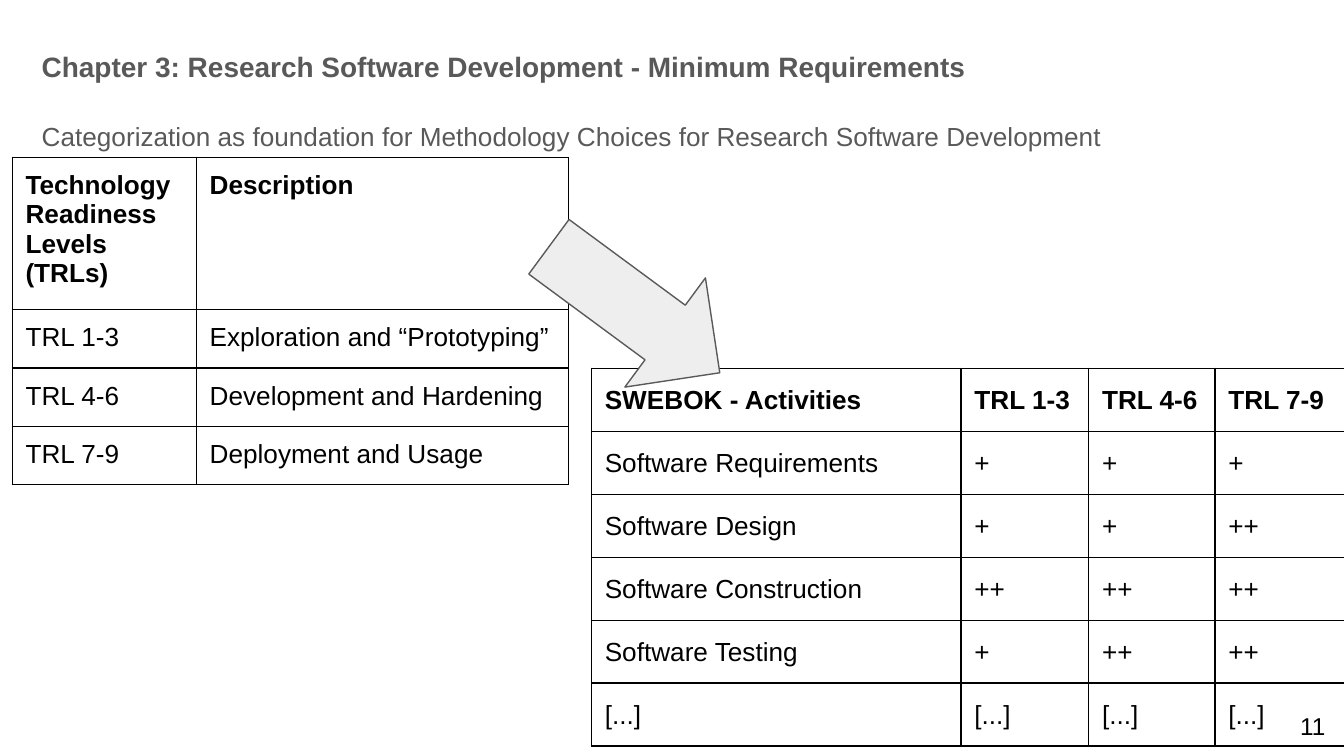
from lxml.etree import SubElement
from pptx import Presentation
from pptx.dml.color import RGBColor
from pptx.enum.shapes import MSO_SHAPE
from pptx.enum.text import MSO_ANCHOR, MSO_AUTO_SIZE, PP_ALIGN
from pptx.oxml.ns import qn
from pptx.util import Inches, Pt

COLORS = {"heading": "595959", "text": "000000", "border": "000000", "arrow": "EEEEEE"}
FONT = "Arial"
MARGIN = 0.1


def format_text(holder, size, color, bold=False, spacing=1.0, align=PP_ALIGN.LEFT, margin=0.0):
    """Format all text of a text frame or table cell, and set its margins."""
    holder.margin_left = holder.margin_right = Inches(margin)
    holder.margin_top = holder.margin_bottom = Inches(margin)
    frame = getattr(holder, "text_frame", holder)
    frame.word_wrap = True
    for paragraph in frame.paragraphs:
        paragraph.alignment = align
        paragraph.line_spacing = spacing
        paragraph.space_before = Pt(0)
        paragraph.font.name = FONT
        paragraph.font.size = Pt(size)
        paragraph.font.bold = bold
        paragraph.font.color.rgb = RGBColor.from_string(COLORS[color])
        # The paragraph mark would otherwise keep 18 points and stretch the line
        SubElement(paragraph._p, qn("a:endParaRPr"), sz=str(size * 100))


def add_grid(slide, left, top, widths, row_height, rows, spacing):
    """Add a bordered, unfilled table with a bold header row."""
    frame = slide.shapes.add_table(
        len(rows), len(widths), Inches(left), Inches(top),
        Inches(sum(widths)), Inches(row_height * len(rows)),
    )
    table = frame.table
    table.horz_banding = False
    for column, width in zip(table.columns, widths):
        column.width = Inches(width)
    for row_index, row in enumerate(rows):
        table.rows[row_index].height = Inches(row_height)
        for column_index, text in enumerate(row):
            cell = table.cell(row_index, column_index)
            cell.text = text
            format_text(cell, 14, "text", row_index == 0, spacing, margin=MARGIN)
            properties = cell._tc.get_or_add_tcPr()
            for side in ("a:lnL", "a:lnR", "a:lnT", "a:lnB"):
                line = SubElement(properties, qn(side), w=str(Pt(0.75)))
                fill = SubElement(line, qn("a:solidFill"))
                SubElement(fill, qn("a:srgbClr"), val=COLORS["border"])
            cell.fill.background()
    # Rows and columns keep their own sizes inside a square frame
    frame.width = frame.height = Inches(3.28)


presentation = Presentation()
presentation.slide_width = Inches(10)
presentation.slide_height = Inches(10 * 9 / 16)
slide = presentation.slides.add_slide(presentation.slide_layouts[1])

# Heading and subheading
title = slide.shapes.title
title.left, title.top, title.width, title.height = map(Inches, (0.31, 0.17, 9.42, 0.45))
title.text_frame.text = "Chapter 3: Research Software Development - Minimum Requirements"
title.text_frame.auto_size = MSO_AUTO_SIZE.NONE
title.text_frame.vertical_anchor = MSO_ANCHOR.BOTTOM
format_text(title.text_frame, 15, "heading", bold=True, spacing=0.9)

body = slide.placeholders[1]
body.left, body.top, body.width, body.height = map(Inches, (0.31, 0.86, 9.3, 0.62))
body.text_frame.text = (
    "Categorization as foundation for Methodology Choices for Research Software Development"
)
body.text_frame.auto_size = MSO_AUTO_SIZE.NONE
format_text(body.text_frame, 14, "heading", spacing=1.15)
body_properties = body.text_frame.paragraphs[0]._p.get_or_add_pPr()
body_properties.set("marL", "0")
body_properties.set("indent", "0")
SubElement(body_properties, qn("a:buNone"))
# Bullet settings must precede the default run properties
body_properties.append(body_properties.find(qn("a:defRPr")))

page_number = slide.shapes.add_textbox(Inches(9.36), Inches(5.19), Inches(0.6), Inches(0.43))
page_number.text_frame.text = "11"
format_text(page_number.text_frame, 13, "text", align=PP_ALIGN.RIGHT, margin=MARGIN)

# Readiness levels and the activities they call for
levels = ["TRL 1-3", "TRL 4-6", "TRL 7-9"]
descriptions = [
    "Exploration and “Prototyping”",
    "Development and Hardening",
    "Deployment and Usage",
]
level_rows = [("Technology Readiness Levels (TRLs)", "Description"), *zip(levels, descriptions)]
add_grid(slide, 0.09, 1.17, [1.37, 2.77], 0.42, level_rows, 1.0)

activity_rows = [
    ["SWEBOK - Activities", *levels],
    ["Software Requirements", "+", "+", "+"],
    ["Software Design", "+", "+", "++"],
    ["Software Construction", "++", "++", "++"],
    ["Software Testing", "+", "++", "++"],
    ["[...]"] * 4,
]
add_grid(slide, 4.4, 2.74, [2.75, 0.95, 0.94, 0.97], 0.4, activity_rows, 1.15)

arrow = slide.shapes.add_shape(
    MSO_SHAPE.RIGHT_ARROW, Inches(3.93), Inches(1.8), Inches(1.58), Inches(1.01)
)
arrow.rotation = 36.4
arrow.shadow.inherit = False
arrow.fill.solid()
arrow.fill.fore_color.rgb = RGBColor.from_string(COLORS["arrow"])
arrow.line.color.rgb = RGBColor.from_string(COLORS["heading"])
arrow.line.width = Pt(0.75)

presentation.save("out.pptx")
